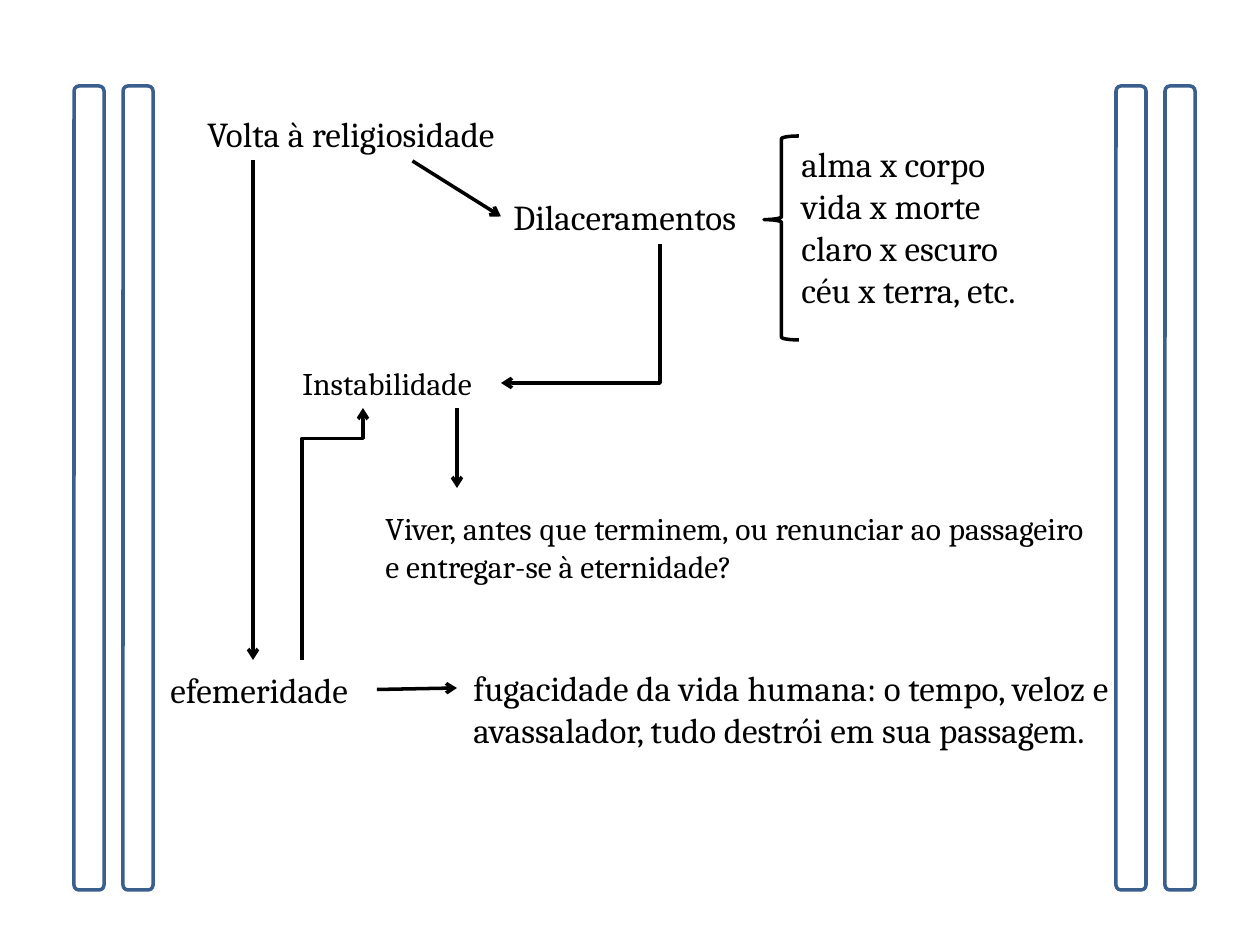
from dataclasses import dataclass
from typing import Optional

from lxml import etree
from pptx import Presentation
from pptx.dml.color import RGBColor
from pptx.enum.shapes import MSO_CONNECTOR, MSO_SHAPE
from pptx.enum.text import MSO_AUTO_SIZE, PP_ALIGN
from pptx.oxml.ns import qn
from pptx.util import Emu, Pt

STRAIGHT, ELBOW = MSO_CONNECTOR.STRAIGHT, MSO_CONNECTOR.ELBOW
BAR, BRACE = MSO_SHAPE.ROUNDED_RECTANGLE, MSO_SHAPE.LEFT_BRACE
LEFT, JUSTIFY = PP_ALIGN.LEFT, PP_ALIGN.JUSTIFY
FIT = MSO_AUTO_SIZE.SHAPE_TO_FIT_TEXT

BLACK = RGBColor(0x00, 0x00, 0x00)
WHITE = RGBColor(0xFF, 0xFF, 0xFF)
BLUE = RGBColor(0x3A, 0x5F, 0x8C)
FONT = "Cambria"
STROKE = Pt(2)
BOTTOM, WEST, EAST = 2, 1, 3


def px(n: float) -> Emu:
    return Emu(round(n * 914400 / 126))


@dataclass
class Label:
    name: str
    x: int
    y: int
    w: int
    h: int
    lines: list[str]
    size: int = 20
    wrap: bool = True
    align: PP_ALIGN = LEFT


@dataclass
class Arrow:
    x1: int
    y1: int
    x2: int
    y2: int
    start: Optional[str] = None  # label joined at the tail
    side: int = BOTTOM
    end: Optional[str] = None  # label joined at its left side


@dataclass
class Bend:
    x1: int
    y1: int
    x2: int
    y2: int
    turn: int
    kind: str
    adjust: Optional[int] = None


LABELS = [
    Label("return", 195, 106, 435, 55, ["Volta à religiosidade"]),
    Label("tear", 501, 189, 318, 55, ["Dilaceramentos"]),
    Label("pairs", 789, 136, 297, 183,
          ["alma x corpo", "vida x morte", "claro x escuro", "céu x terra, etc."]),
    Label("brief", 158, 662, 219, 55, ["efemeridade"], wrap=False),
    Label("unrest", 290, 358, 212, 50, ["Instabilidade"], 18, False),
    Label("fleeting", 461, 660, 660, 140,
          ["fugacidade da vida humana: o tempo, veloz e avassalador, "
           "tudo destrói em sua passagem."], align=JUSTIFY),
    Label("choice", 373, 503, 723, 89,
          ["Viver, antes que terminem, ou renunciar ao passageiro "
           "e entregar-se à eternidade?"], 18, align=JUSTIFY),
]
ARROWS = [
    Arrow(413, 160, 501, 217, "return", BOTTOM, "tear"),
    Arrow(253, 160, 253, 660),
    Arrow(377, 688, 457, 688, "brief", EAST),
    Arrow(457, 408, 457, 488),
]
BENDS = [
    Bend(660, 244, 501, 383, 90, "bentConnector2"),
    Bend(302, 660, 363, 408, 270, "bentConnector3", 88000),
]
BARS = [74, 123, 1116, 1165]


def add_label(slide, item: Label):
    box = slide.shapes.add_textbox(px(item.x), px(item.y), px(item.w), px(item.h))
    frame = box.text_frame
    frame.word_wrap = item.wrap
    frame.auto_size = FIT
    para = frame.paragraphs[0]
    para.alignment = item.align
    for i, line in enumerate(item.lines):
        if i:
            para.add_line_break()
        run = para.add_run()
        run.text = line
        run.font.name, run.font.size = FONT, Pt(item.size)
        run.font.color.rgb = BLACK
    return box


def style_arrow(link) -> None:
    link.line.color.rgb = BLACK
    link.line.width = STROKE
    etree.SubElement(link.line._get_or_add_ln(), qn("a:tailEnd"), type="arrow")
    etree.SubElement(link._element.spPr, qn("a:effectLst"))


def add_arrow(slide, item: Arrow, boxes: dict) -> None:
    link = slide.shapes.add_connector(
        STRAIGHT, px(item.x1), px(item.y1), px(item.x2), px(item.y2))
    if item.start:
        link.begin_connect(boxes[item.start], item.side)
    if item.end:
        link.end_connect(boxes[item.end], WEST)
    style_arrow(link)


def add_bend(slide, item: Bend) -> None:
    # A quarter turn swaps width and height about the centre
    midx, midy = (item.x1 + item.x2) / 2, (item.y1 + item.y2) / 2
    halfw, halfh = abs(item.y2 - item.y1) / 2, abs(item.x2 - item.x1) / 2
    link = slide.shapes.add_connector(
        ELBOW, px(midx - halfw), px(midy - halfh), px(midx + halfw), px(midy + halfh))
    props = link._element.spPr
    props.find(qn("a:xfrm")).set("rot", str(item.turn * 60000))
    geom = props.find(qn("a:prstGeom"))
    geom.set("prst", item.kind)
    if item.adjust is not None:
        guides = geom.find(qn("a:avLst"))
        etree.SubElement(guides, qn("a:gd"), name="adj1", fmla=f"val {item.adjust}")
    style_arrow(link)


def add_bar(slide, x: int) -> None:
    bar = slide.shapes.add_shape(BAR, px(x), px(86), px(30), px(804))
    bar.shadow.inherit = False
    bar.fill.solid()
    bar.fill.fore_color.rgb = WHITE
    bar.line.color.rgb = BLUE
    bar.line.width = STROKE


def add_brace(slide) -> None:
    brace = slide.shapes.add_shape(BRACE, px(764), px(136), px(35), px(204))
    brace.shadow.inherit = False
    brace.adjustments[0], brace.adjustments[1] = 0.08, 0.41
    brace.fill.background()
    brace.line.color.rgb = BLACK
    brace.line.width = STROKE


def main() -> None:
    deck = Presentation()
    deck.slide_width, deck.slide_height = px(1260), px(945)
    slide = deck.slides.add_slide(deck.slide_layouts[6])

    # Concepts and the brace around the opposites
    boxes = {item.name: add_label(slide, item) for item in LABELS}
    add_brace(slide)

    # Links between concepts
    for arrow in ARROWS:
        add_arrow(slide, arrow, boxes)
    for bend in BENDS:
        add_bend(slide, bend)

    # Side columns
    for x in BARS:
        add_bar(slide, x)

    deck.save("out.pptx")


if __name__ == "__main__":
    main()
